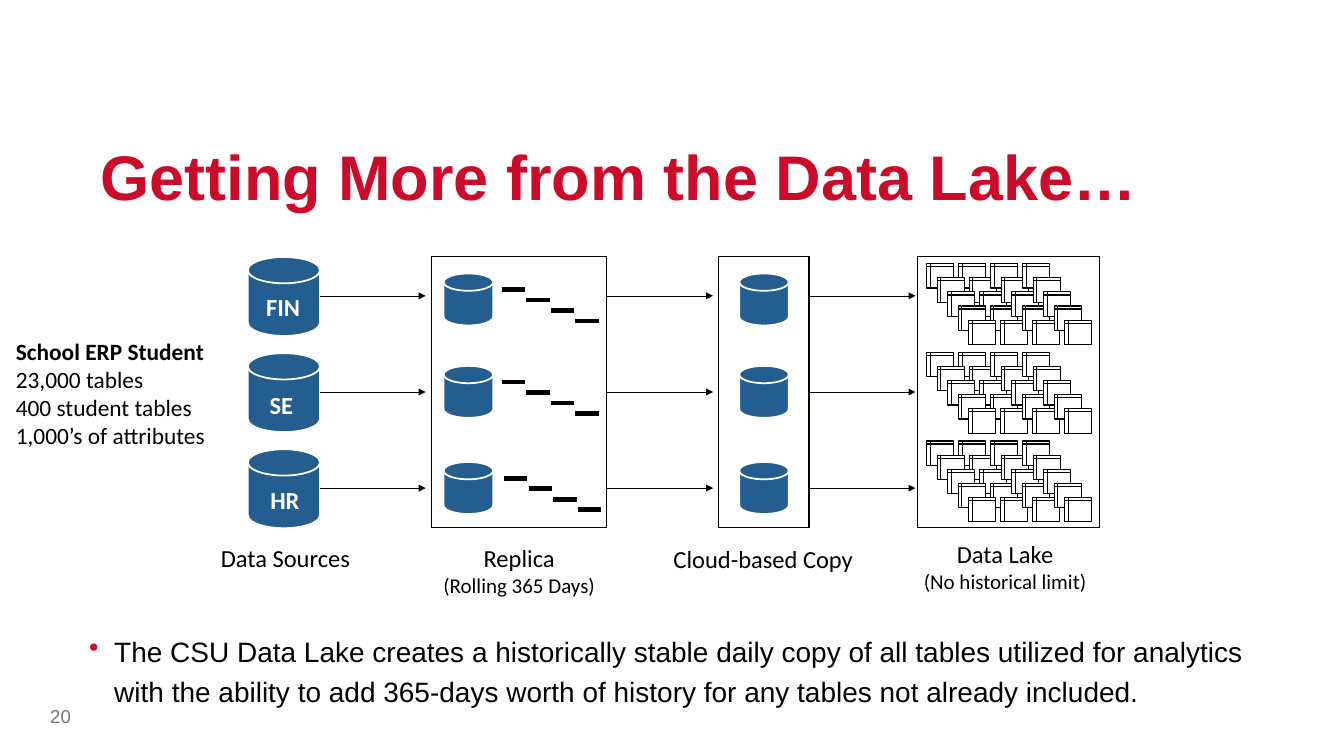
from dataclasses import dataclass

from lxml import etree
from pptx import Presentation
from pptx import util as u
from pptx.dml.color import RGBColor
from pptx.enum import shapes, text
from pptx.oxml import ns

MSO = shapes.MSO_SHAPE
LEFT, CENTER = text.PP_ALIGN.LEFT, text.PP_ALIGN.CENTER


@dataclass(frozen=True)
class Theme:
    red: str = "CC0B2A"
    blue: str = "245E90"
    black: str = "000000"
    white: str = "FFFFFF"
    gray: str = "767679"
    head: str = "Arial"
    body: str = "Calibri"
    title: int = 54
    bullet: int = 24
    label: int = 21
    side: int = 20
    note: int = 18
    number: int = 16


class Deck:
    def __init__(self, prs, theme):
        self.t = theme
        self.s = prs.slides.add_slide(prs.slide_layouts[6])

    def shape(self, kind, x, y, w, h, fill=None, line=None, width=1):
        sp = self.s.shapes.add_shape(kind, u.Pt(x), u.Pt(y), u.Pt(w), u.Pt(h))
        sp.shadow.inherit = False
        if fill:
            sp.fill.solid()
            sp.fill.fore_color.rgb = RGBColor.from_string(fill)
        else:
            sp.fill.background()
        sp.line.color.rgb = RGBColor.from_string(line or self.t.black)
        sp.line.width = u.Pt(width)

    def panel(self, x, w):
        self.shape(MSO.RECTANGLE, x, 220, w, 232.5)

    def disk(self, x, y, w, h):
        self.shape(MSO.FLOWCHART_MAGNETIC_DISK, x, y, w, h, self.t.blue, self.t.white, 1.5)

    def table_icon(self, x, y):
        self.shape(MSO.FLOWCHART_INTERNAL_STORAGE, x, y, 23, 20.9, self.t.white)

    def line(self, x, y, length, width, arrow=False):
        c = self.s.shapes.add_connector(shapes.MSO_CONNECTOR.STRAIGHT,
                                        u.Pt(x), u.Pt(y), u.Pt(x + length), u.Pt(y))
        c.line.color.rgb = RGBColor.from_string(self.t.black)
        c.line.width = u.Pt(width)
        if arrow:
            ln = c.line._get_or_add_ln()
            etree.SubElement(ln, ns.qn("a:tailEnd"), type="triangle")
        etree.SubElement(c._element.spPr, ns.qn("a:effectLst"))

    def text(self, x, y, w, h, lines, align=LEFT, insets=(7.2, 3.6, 7.2, 3.6),
             anchor=text.MSO_ANCHOR.TOP, spacing=None, bullet=None):
        """Each line is (wording, size, format values that differ from the default)."""
        sp = self.s.shapes.add_textbox(u.Pt(x), u.Pt(y), u.Pt(w), u.Pt(h))
        tf = sp.text_frame
        tf.word_wrap = True
        tf.vertical_anchor = anchor
        for side, inset in zip(("left", "top", "right", "bottom"), insets):
            setattr(tf, f"margin_{side}", u.Pt(inset))
        for i, (wording, size, changes) in enumerate(lines):
            p = tf.paragraphs[0] if i == 0 else tf.add_paragraph()
            p.alignment = align
            if spacing:
                p.line_spacing = spacing
            if bullet:
                self.bullet(p, bullet)
            r = p.add_run()
            r.text = wording
            values = {"name": self.t.body, "size": u.Pt(size), "bold": False,
                      "color": self.t.black} | changes
            r.font.color.rgb = RGBColor.from_string(values.pop("color"))
            for name, value in values.items():
                setattr(r.font, name, value)

    def bullet(self, p, color):
        pr = p._p.get_or_add_pPr()
        indent = u.Pt(21.6)
        pr.set("marL", str(indent))
        pr.set("indent", str(-indent))
        clr = etree.SubElement(pr, ns.qn("a:buClr"))
        etree.SubElement(clr, ns.qn("a:srgbClr"), val=color)
        etree.SubElement(pr, ns.qn("a:buChar"), char="•")


def main():
    prs = Presentation()
    prs.slide_width, prs.slide_height = u.Pt(1152), u.Pt(648)
    t = Theme()
    d = Deck(prs, t)

    d.text(86.4, 110.2, 987, 72.7,
           [("Getting More from the Data Lake…", t.title,
             {"name": t.head, "bold": True, "color": t.red})],
           insets=(0, 7.6, 21.6, 0))
    d.text(36, 596.2, 115.2, 34.6, [("20", t.number, {"name": t.head, "color": t.gray})],
           anchor=text.MSO_ANCHOR.MIDDLE)

    # Panels of the three later stages
    for x, w in ((370, 149.8), (615.6, 77.8), (786.4, 156)):
        d.panel(x, w)

    # One row per source system: name, label place, top of the small disks, dash start
    rows = (("FIN", 221, 247, 234.4, 430), ("SE", 224, 330.5, 313.6, 430),
            ("HR", 224.6, 411.8, 396, 432))
    for i, (name, label_x, label_y, disk_y, dash_x) in enumerate(rows):
        arrow_y = 253.6 + 82.4 * i
        d.disk(212.4, arrow_y - 33.3, 61.9, 67.7)
        d.text(label_x, label_y, 48.2 if name == "FIN" else 41, 32.4,
               [(name, t.label, {"bold": True, "color": t.white})])
        for x in (274.3, 520.6, 694.1):
            d.line(x, arrow_y, 90.6, 0.5, arrow=True)
        for x in (380.2, 633.6):
            d.disk(x, disk_y, 42.5, 44.6)
        for step in range(4):
            d.line(dash_x + 21.1 * step, disk_y + 13.9 + 9 * step, 20, 4)

    # Banks of table icons; the leftmost column lies on top
    for column in (1, 2, 3, 0):
        for bank in range(3):
            for step in range(5):
                d.table_icon(794.5 + 27.4 * column + 9 * step,
                             226 + 76 * bank + 12.1 * step)

    captions = ((182.2, 462.2, 129.6, LEFT, ("Data Sources",)),
                (365.8, 462.2, 158.4, CENTER, ("Replica", "(Rolling 365 Days)")),
                (570.2, 463, 169.2, LEFT, ("Cloud-based Copy",)),
                (780.5, 458.6, 162, CENTER, ("Data Lake", "(No historical limit)")))
    for x, y, w, align, words in captions:
        lines = [(word, size, {}) for word, size in zip(words, (t.label, t.note))]
        d.text(x, y, w, 32.4 if len(words) == 1 else 54.7, lines, align)

    facts = ("23,000 tables", "400 student tables", "1,000’s of attributes")
    d.text(6.5, 285.1, 186.5, 104.4,
           [("School ERP Student", t.side, {"bold": True})]
           + [(fact, t.side, {}) for fact in facts])
    d.text(76.3, 523.4, 1018.8, 109.4,
           [("The CSU Data Lake creates a historically stable daily copy of all tables "
             "utilized for analytics with the ability to add 365-days worth of history "
             "for any tables not already included.", t.bullet, {"name": t.head})],
           insets=(0, 14.6, 21.6, 7.2), spacing=1.2, bullet=t.red)

    prs.save("out.pptx")


if __name__ == "__main__":
    main()
